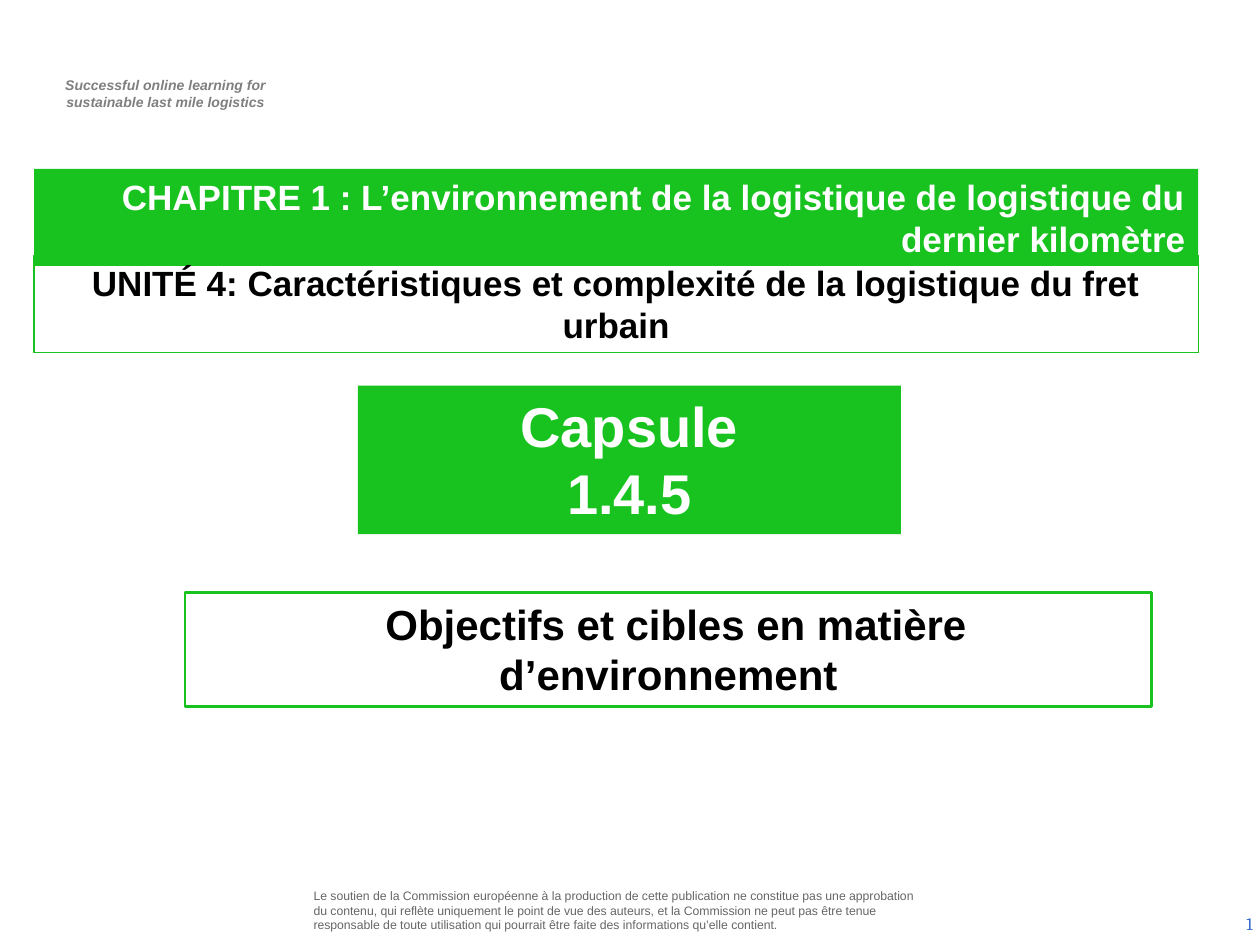
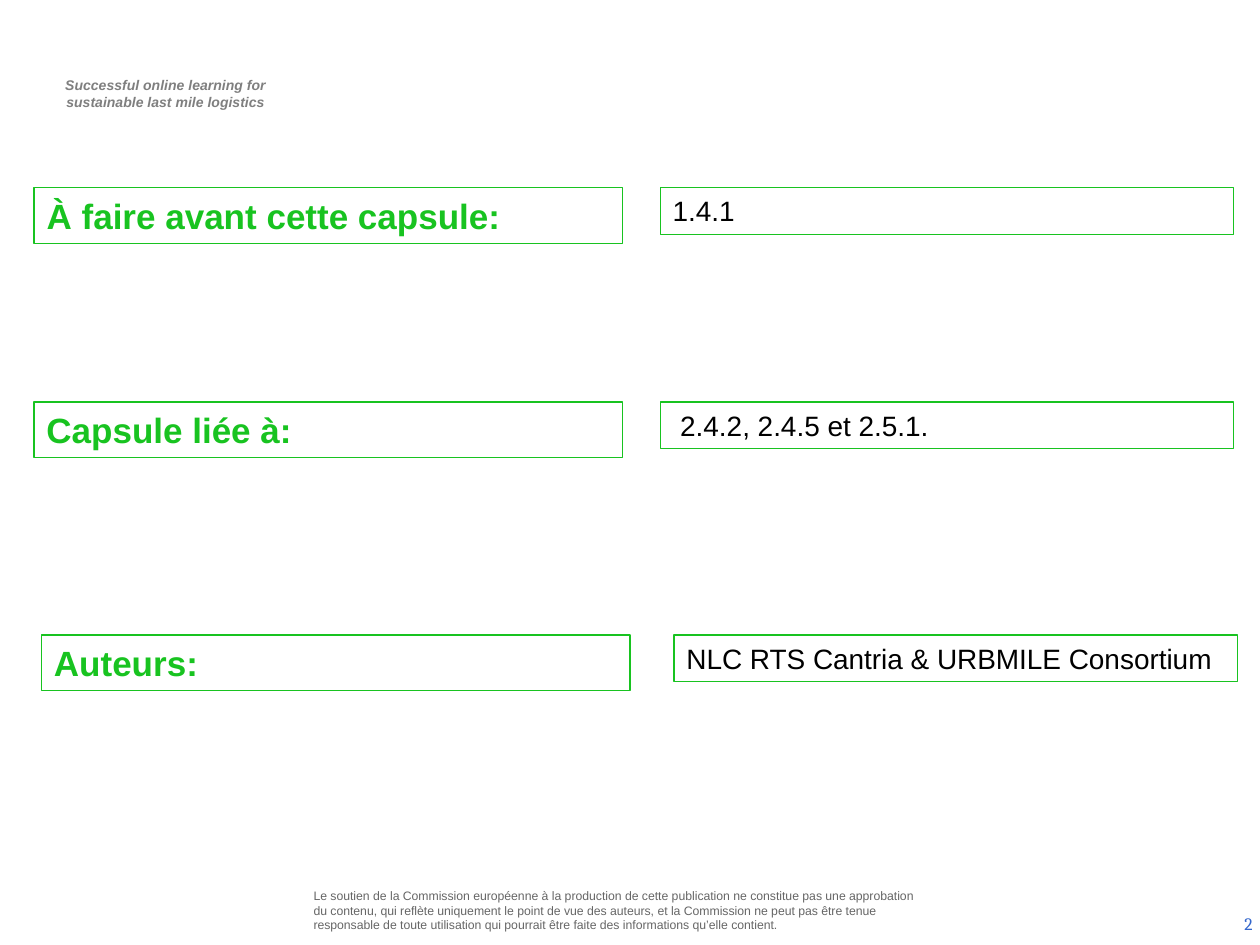
from lxml import etree
from pptx import Presentation
from pptx.dml.color import RGBColor
from pptx.enum.shapes import MSO_SHAPE
from pptx.enum.text import MSO_ANCHOR, MSO_AUTO_SIZE, PP_ALIGN
from pptx.oxml import parse_xml
from pptx.oxml.ns import nsdecls, qn
from pptx.util import Inches, Pt

RECT = MSO_SHAPE.RECTANGLE
TOP, MIDDLE = MSO_ANCHOR.TOP, MSO_ANCHOR.MIDDLE
GROW, FIXED = MSO_AUTO_SIZE.SHAPE_TO_FIT_TEXT, MSO_AUTO_SIZE.NONE
LEFT, CENTER, RIGHT = PP_ALIGN.LEFT, PP_ALIGN.CENTER, PP_ALIGN.RIGHT

GREEN, WHITE, BLACK = "18C320", "FFFFFF", "000000"
STRAP_GREY, NOTE_GREY, NUMBER_BLUE = "7F7F7F", "666666", "3366CC"

SLIDE_W, SLIDE_H = Inches(10), Inches(7.5)
COL, ROW = SLIDE_W / 10, SLIDE_H / 7.5
TITLE_ONLY = 5

BAND_LEFT, BAND_W, BAND_H = 0.27, 9.24, 0.77
LABEL_W, LABEL_H, ANSWER_H = 4.67, 0.44, 0.37

STRAPLINE = ["Successful online learning for", "sustainable last mile logistics"]
DISCLAIMER = (
    "Le soutien de la Commission européenne à la production de cette publication "
    "ne constitue pas une approbation du contenu, qui reflète uniquement le point "
    "de vue des auteurs, et la Commission ne peut pas être tenue responsable de "
    "toute utilisation qui pourrait être faite des informations qu’elle contient."
)
# label, answer, row, label left, answer left, answer width, answer indent
CAPSULE_FACTS = [
    ("À faire avant cette capsule:", "1.4.1", 1.49, 0.27, 5.24, 4.55, 0),
    ("Capsule liée à:", "2.4.2, 2.4.5 et 2.5.1.", 3.19, 0.27, 5.24, 4.55, 0.06),
    ("Auteurs:", "NLC RTS Cantria & URBMILE Consortium", 5.04, 0.33, 5.35, 4.47, 0),
]


def rgb(hex_code):
    return RGBColor.from_string(hex_code)


def grid(left, top, width, height):
    """Turn columns and rows into slide lengths."""
    return [int(n * unit) for n, unit in zip((left, top, width, height), (COL, ROW) * 2)]


def write(s, lines, size, color=BLACK, font="Arial", bold=False, italic=False,
          align=LEFT, anchor=TOP, auto_size=GROW, indent=0):
    """Fill a shape with paragraphs; indent moves the first line of each."""
    tf = s.text_frame
    tf.text = "\n".join(lines)
    tf.word_wrap = True
    tf.auto_size = auto_size
    tf.vertical_anchor = anchor
    tf.margin_left = tf.margin_right = Inches(0.1)
    tf.margin_top = tf.margin_bottom = Inches(0.05)
    for p in tf.paragraphs:
        p.alignment = align
        if indent:
            p._p.get_or_add_pPr().set("indent", str(Inches(indent)))
        for r in p.runs:
            f = r.font
            f.name, f.size, f.bold, f.italic = font, Pt(size), bold, italic
            f.color.rgb = rgb(color)
    return s


def paint(s, fill=None, line=None, weight=0.75):
    if fill:
        s.fill.solid()
        s.fill.fore_color.rgb = rgb(fill)
    else:
        s.fill.background()
    if line:
        s.line.color.rgb = rgb(line)
        s.line.width = Pt(weight)
    else:
        s.line.fill.background()


def add_box(slide, place, lines, size, fill=None, line=None, weight=0.75, **text):
    s = slide.shapes.add_shape(RECT, *grid(*place))
    s.shadow.inherit = False
    paint(s, fill, line, weight)
    return write(s, lines, size, **text)


def set_title(slide, place, lines, size, fill=None, line=None, **text):
    s = slide.shapes.title
    s.left, s.top, s.width, s.height = grid(*place)
    paint(s, fill, line)
    return write(s, lines, size, auto_size=FIXED, **text)


def add_text(slide, place, lines, size, **text):
    return write(slide.shapes.add_textbox(*grid(*place)), lines, size, **text)


def add_slide_number(slide, number):
    s = add_text(slide, (7.71, 7.13, 2.33, 0.4), [str(number)], 10, color=NUMBER_BLUE,
                 font="Cambria", align=RIGHT, anchor=MIDDLE, auto_size=FIXED)
    r = s.text_frame.paragraphs[0].runs[0]._r
    field = parse_xml(f'<a:fld {nsdecls("a")} type="slidenum" '
                      'id="{B6F15528-21DE-4FAA-801E-634DDDAF4B2B}"/>')
    r.addprevious(field)
    field.append(r.find(qn("a:rPr")))
    etree.SubElement(field, qn("a:t")).text = str(number)
    field.getparent().remove(r)


def move_frame_to_layout(slide):
    """Write the strapline and disclaimer once, on the layout all slides share."""
    strap = add_text(slide, (0.29, 0.56, 2.03, 0.37), STRAPLINE, 8, color=STRAP_GREY,
                     bold=True, italic=True, align=CENTER, indent=0.02)
    note = add_text(slide, (2.39, 7, 5.03, 0.45), [DISCLAIMER], 7, color=NOTE_GREY)
    for s in (strap, note):
        slide.slide_layout.shapes.element.append(s.element)


def build_cover(slide):
    set_title(slide, (BAND_LEFT, 1.34, BAND_W, BAND_H),
              ["CHAPITRE 1 : L’environnement de la logistique de logistique "
               "du dernier kilomètre"],
              20, fill=GREEN, color=WHITE, bold=True, align=RIGHT)
    add_box(slide, (BAND_LEFT, 2.03, BAND_W, BAND_H),
            ["UNITÉ 4: Caractéristiques et complexité de la logistique du fret urbain"],
            20, line=GREEN, bold=True, align=CENTER)
    add_box(slide, (2.84, 3.06, 4.31, 1.18), ["Capsule", "1.4.5"], 32,
            fill=GREEN, color=WHITE, bold=True, align=CENTER)
    add_box(slide, (1.47, 4.7, 7.67, 0.91),
            ["Objectifs et cibles en matière d’environnement"],
            24, line=GREEN, weight=1.5, bold=True, align=CENTER, indent=0.12)


def build_capsule_facts(slide):
    for i, (label, answer, row, left, answer_left, answer_w, indent) in enumerate(CAPSULE_FACTS):
        add_label = add_box if i else set_title
        add_label(slide, (left, row, LABEL_W, LABEL_H), [label], 20,
                  fill=WHITE, line=GREEN, color=GREEN, bold=True)
        add_box(slide, (answer_left, row, answer_w, ANSWER_H), [answer], 16,
                fill=WHITE, line=GREEN, indent=indent)


def main():
    prs = Presentation()
    prs.slide_width, prs.slide_height = SLIDE_W, SLIDE_H
    layout = prs.slide_layouts[TITLE_ONLY]
    for number, build in enumerate((build_cover, build_capsule_facts), 1):
        slide = prs.slides.add_slide(layout)
        if number == 1:
            move_frame_to_layout(slide)
        add_slide_number(slide, number)
        build(slide)
    prs.save("out.pptx")


if __name__ == "__main__":
    main()
